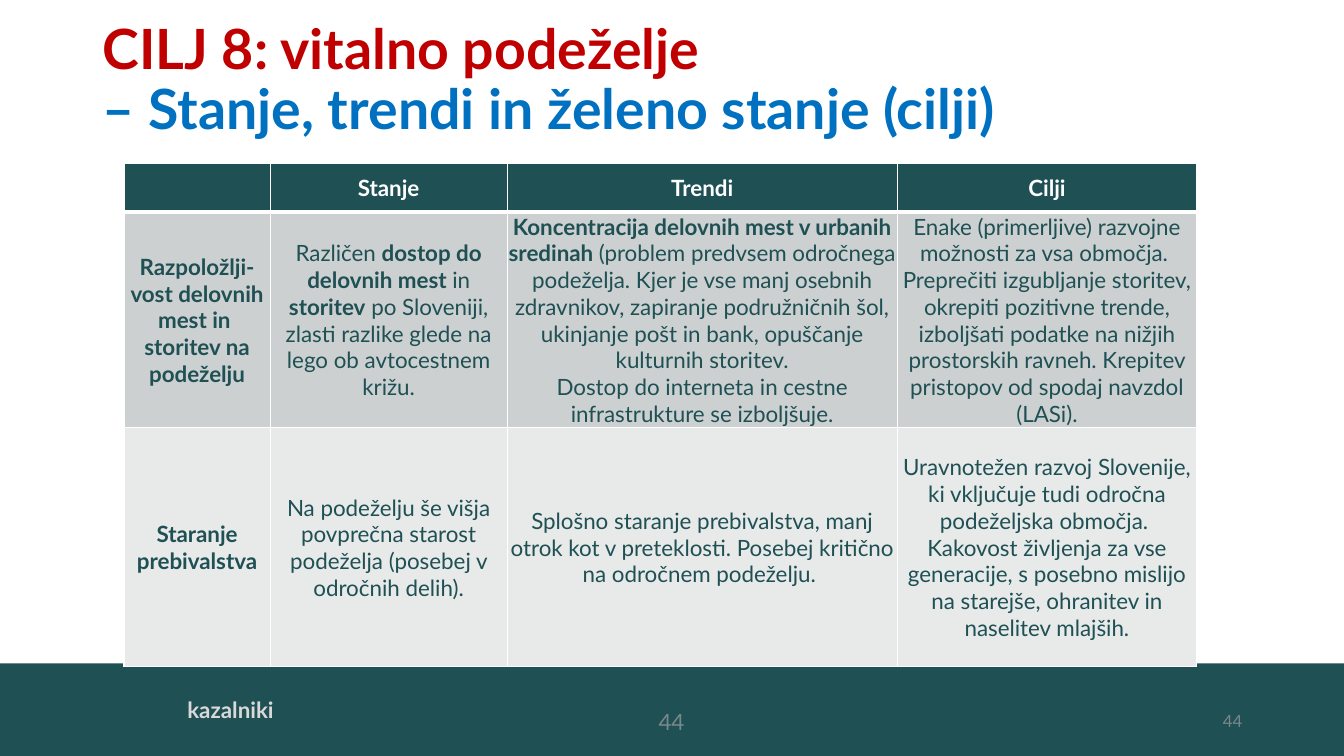
from dataclasses import dataclass
from lxml.etree import SubElement
from pptx import Presentation
from pptx.dml.color import RGBColor
from pptx.enum.shapes import MSO_SHAPE
from pptx.enum.text import MSO_ANCHOR, MSO_AUTO_SIZE, PP_ALIGN
from pptx.oxml import parse_xml
from pptx.oxml.ns import nsdecls, qn
from pptx.util import Inches, Pt


@dataclass(frozen=True)
class Theme:
    font: str = "Lato"
    dark: str = "1E5054"
    red: str = "C00000"
    blue: str = "0070C0"
    white: str = "FFFFFF"
    pale: str = "D9D9D9"
    grey: str = "7B888A"
    bands: tuple = ("CDD0D1", "E8E9E9")
    head: float = 39.6
    body: float = 16
    small: float = 12


HEADS = ["", "Stanje", "Trendi", "Cilji"]
# Each cell is a list of paragraphs; asterisks enclose bold words.
ROWS = [
    [
        ["*Razpoložlji-vost delovnih mest in *", "*storitev na podeželju*"],
        ["Različen *dostop do delovnih mest *in *storitev* po Sloveniji, "
         "zlasti razlike glede na lego ob avtocestnem križu."],
        ["*Koncentracija delovnih mest v urbanih sredinah *(problem predvsem "
         "odročnega podeželja. Kjer je vse manj osebnih zdravnikov, zapiranje "
         "podružničnih šol, ukinjanje pošt in bank, opuščanje kulturnih storitev.",
         "Dostop do interneta in cestne infrastrukture se izboljšuje."],
        ["Enake (primerljive) razvojne možnosti za vsa območja. ",
         "Preprečiti izgubljanje storitev, okrepiti pozitivne trende, izboljšati "
         "podatke na nižjih prostorskih ravneh. Krepitev pristopov od spodaj "
         "navzdol (LASi)."],
    ],
    [
        ["*Staranje prebivalstva*"],
        ["Na podeželju še višja povprečna starost podeželja "
         "(posebej v odročnih delih)."],
        ["Splošno staranje prebivalstva, manj otrok kot v preteklosti. "
         "Posebej kritično na odročnem podeželju. "],
        ["Uravnotežen razvoj Slovenije, ki vključuje tudi odročna "
         "podeželjska območja. ",
         "Kakovost življenja za vse generacije, s posebno mislijo na starejše, "
         "ohranitev in naselitev mlajših."],
    ],
]


def apply(obj, values):
    for name, value in values.items():
        setattr(obj, name, value)


def box(*at):
    return dict(zip(("left", "top", "width", "height"), map(Inches, at)))


class Deck:
    def __init__(self, theme):
        self.theme = theme
        self.show = Presentation()
        apply(self.show, {"slide_width": Inches(13.33), "slide_height": Inches(7.5)})
        self.slide = self.show.slides.add_slide(self.show.slide_layouts[5])

    def run(self, para, text, size, color, bold=False):
        run = para.add_run()
        run.text = text
        apply(run.font, {"name": self.theme.font, "size": Pt(size), "bold": bold})
        run.font.color.rgb = RGBColor.from_string(color)

    def paint(self, shape, color):
        shape.fill.solid()
        shape.fill.fore_color.rgb = RGBColor.from_string(color)

    def band(self, at, color):
        shape = self.slide.shapes.add_shape(MSO_SHAPE.RECTANGLE, **box(*at))
        shape.shadow.inherit = False
        self.paint(shape, color)
        shape.line.fill.background()

    def title(self, at, lines):
        shape = self.slide.shapes.title
        apply(shape, box(*at))
        apply(shape.text_frame, {
            "word_wrap": True, "auto_size": MSO_AUTO_SIZE.NONE,
            "vertical_anchor": MSO_ANCHOR.MIDDLE})
        para = shape.text_frame.paragraphs[0]
        apply(para, {"alignment": PP_ALIGN.LEFT, "line_spacing": 0.9})
        for i, (text, color) in enumerate(lines):
            if i:
                para.add_line_break()
            self.run(para, text, self.theme.head, color, True)

    def text(self, at, text, size, color, align=PP_ALIGN.LEFT,
             anchor=MSO_ANCHOR.MIDDLE, bold=False):
        frame = self.slide.shapes.add_textbox(**box(*at)).text_frame
        apply(frame, {"word_wrap": True, "vertical_anchor": anchor})
        para = frame.paragraphs[0]
        para.alignment = align
        self.run(para, text, size, color, bold)

    def border(self, cell, base):
        """Draw white edges; base is the width of the bottom one in points."""
        props = cell._tc.get_or_add_tcPr()
        for i, (side, width) in enumerate(zip("LRTB", (1, 1, 1, base))):
            line = parse_xml(f'<a:ln{side} {nsdecls("a")} w="{Pt(width)}"/>')
            fill = SubElement(line, qn("a:solidFill"))
            SubElement(fill, qn("a:srgbClr"), val=self.theme.white)
            props.insert(i, line)

    def cell(self, cell, paras, fill, color, base=1):
        apply(cell, {
            "vertical_anchor": MSO_ANCHOR.MIDDLE, "margin_left": Inches(0.01),
            "margin_right": Inches(0.01), "margin_top": Inches(0.01),
            "margin_bottom": 0})
        self.paint(cell, fill)
        self.border(cell, base)
        frame = cell.text_frame
        for i, text in enumerate(paras):
            para = frame.add_paragraph() if i else frame.paragraphs[0]
            para.alignment = PP_ALIGN.CENTER
            for n, part in enumerate(text.split("*")):
                if part:
                    self.run(para, part, self.theme.body, color, n % 2 == 1)

    def table(self, at, widths, heights, heads, rows):
        theme = self.theme
        grid = self.slide.shapes.add_table(
            len(heights), len(widths), **box(*at)).table
        for col, width in zip(grid.columns, widths):
            col.width = Inches(width)
        for row, height in zip(grid.rows, heights):
            row.height = Inches(height)
        for c, head in enumerate(heads):
            paras = [f"*{head}*"] if head else []
            self.cell(grid.cell(0, c), paras, theme.dark, theme.white, 3)
        for r, (row, fill) in enumerate(zip(rows, theme.bands), 1):
            for c, paras in enumerate(row):
                self.cell(grid.cell(r, c), paras, fill, theme.dark)


def main():
    theme = Theme()
    deck = Deck(theme)
    deck.band((0, 6.58, 13.33, 0.92), theme.dark)
    deck.text((1.76, 6.86, 9.91, 0.37), "kazalniki", theme.body, theme.pale,
              anchor=MSO_ANCHOR.TOP, bold=True)
    deck.text((5.16, 6.96, 3, 0.4), "44", theme.body, theme.grey, PP_ALIGN.CENTER)
    deck.title((0.92, 0.4, 9.72, 0.81), [
        ("CILJ 8: vitalno podeželje", theme.red),
        ("– Stanje, trendi in želeno stanje (cilji)", theme.blue)])
    deck.text((9.42, 6.95, 3, 0.4), "44", theme.small, theme.grey, PP_ALIGN.RIGHT)
    deck.table((1.23, 1.62, 10.64, 5), (1.45, 2.35, 3.87, 2.97),
               (0.48, 2.14, 2.37), HEADS, ROWS)
    deck.show.save("out.pptx")


if __name__ == "__main__":
    main()
